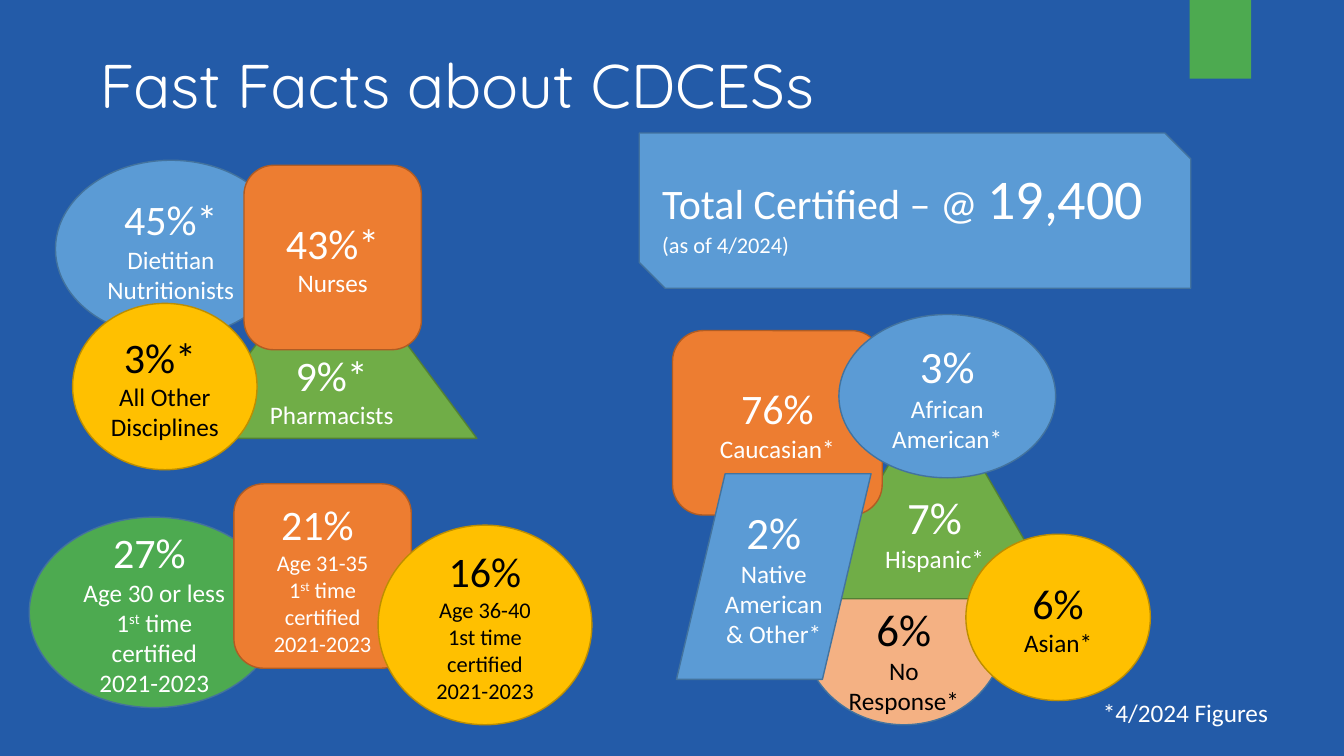
import collections
import dataclasses

import pptx
import pptx.dml.color
import pptx.enum.shapes
import pptx.enum.text
import pptx.util

PX = 9144  # EMU in one px, 100 px to the inch
SHAPES = pptx.enum.shapes.MSO_SHAPE
ALIGN = pptx.enum.text.PP_ALIGN
ANCHOR = pptx.enum.text.MSO_ANCHOR

Box = collections.namedtuple("Box", "left top width height")
Skin = collections.namedtuple("Skin", "fill line text")
Span = collections.namedtuple("Span", "text size raised", defaults=[False])
Fact = collections.namedtuple("Fact", "kind skin box paras frame", defaults=[{}])


@dataclasses.dataclass(frozen=True)
class Theme:
    background: str = "235BA8"
    accent: str = "4DAA50"
    white: str = "FFFFFF"
    body_font: str = "Calibri"
    title_font: str = "Quicksand"
    title: int = 44
    total: int = 40
    large: int = 32
    figure: int = 30
    label: int = 18
    small: int = 16
    blue: Skin = Skin("5B9BD5", "43739E", "FFFFFF")
    orange: Skin = Skin("ED7D31", "AF5C24", "FFFFFF")
    yellow: Skin = Skin("FFC000", "BD8E00", "000000")
    leaf: Skin = Skin("70AD47", "538035", "FFFFFF")
    green: Skin = Skin("4DAA50", "43739E", "FFFFFF")
    peach: Skin = Skin("F4B183", "43739E", "000000")


THEME = Theme()


def color(code):
    return pptx.dml.color.RGBColor.from_string(code)


def px(*lengths):
    return [length * PX for length in lengths]


def apply(target, values):
    for name, value in values.items():
        setattr(target, name, value)


def within(region, part):
    return Box(region.left + part.left, region.top + part.top, part.width, part.height)


def write(shape, paras, ink, font=THEME.body_font, para_format=None, frame_format=None):
    frame = shape.text_frame
    apply(frame, {"word_wrap": True, "vertical_anchor": ANCHOR.MIDDLE, **(frame_format or {})})
    for index, spans in enumerate(paras):
        para = frame.paragraphs[0] if index == 0 else frame.add_paragraph()
        apply(para, para_format or {"alignment": ALIGN.CENTER})
        for span in spans:
            run = para.add_run()
            run.text = span.text
            apply(run.font, {"name": font, "size": pptx.util.Pt(span.size)})
            run.font.color.rgb = color(ink)
            if span.raised:
                run.font._element.set("baseline", "30000")


def add_block(page, kind, box, fill, line=None):
    shape = page.shapes.add_shape(kind, *px(*box))
    shape.shadow.inherit = False
    shape.fill.solid()
    shape.fill.fore_color.rgb = color(fill)
    if line:
        shape.line.color.rgb = color(line)
        shape.line.width = pptx.util.Pt(1)
    else:
        shape.line.fill.background()
    return shape


def add_title(page, box):
    write(page.shapes.add_textbox(*px(*box)), [[Span("Fast Facts about CDCESs", THEME.title)]],
          THEME.white, THEME.title_font, {"alignment": ALIGN.LEFT, "line_spacing": 0.9})


def add_total(page, box):
    skin = THEME.blue
    banner = add_block(page, SHAPES.SNIP_2_DIAG_RECTANGLE, box, skin.fill, skin.line)
    spans = [Span("Total Certified – @ ", THEME.figure), Span("19,400 ", THEME.total),
             Span("(as of 4/2024)", THEME.small)]
    write(banner, [spans], skin.text, para_format={"alignment": ALIGN.LEFT})


def add_cluster(page, region, facts):
    for fact in facts:
        skin = fact.skin
        shape = add_block(page, fact.kind, within(region, fact.box), skin.fill, skin.line)
        if fact.kind == SHAPES.CHORD:
            for index, degrees in enumerate((215.26, 162)):
                shape.adjustments[index] = degrees * 0.6
        write(shape, fact.paras, skin.text, frame_format=fact.frame)


def add_footnote(page, box):
    write(page.shapes.add_textbox(*px(*box)), [[Span("*4/2024 Figures", THEME.label)]],
          THEME.white, para_format={"alignment": ALIGN.LEFT},
          frame_format={"vertical_anchor": ANCHOR.TOP,
                        "auto_size": pptx.enum.text.MSO_AUTO_SIZE.SHAPE_TO_FIT_TEXT})


def headline(figure, label, size=THEME.figure):
    """Figure and label in one paragraph, which wraps between them."""
    return [[Span(figure, size), Span(label, THEME.label)]]


def stacked(figure, label, size=THEME.figure):
    """Figure and label in a paragraph each."""
    return [[span] for span in headline(figure, label, size)[0]]


def age_group(figure, ages, size, raised=True):
    first_time = [Span("1", size), Span("st", size, raised), Span(" time certified", size)]
    return [figure, [Span(ages, size)], first_time, [Span("2021-2023", size)]]


# Share of certified people by discipline
DISCIPLINES = [
    Fact(SHAPES.ISOSCELES_TRIANGLE, THEME.leaf, Box(130, 82, 288, 194),
         headline("9%* ", "Pharmacists")),
    Fact(SHAPES.OVAL, THEME.blue, Box(0, 0, 229, 176),
         headline("45%* ", "Dietitian Nutritionists")),
    Fact(SHAPES.ROUNDED_RECTANGLE, THEME.orange, Box(187, 5, 176, 183),
         headline("43%*", " Nurses")),
    Fact(SHAPES.OVAL, THEME.yellow, Box(17, 142, 183, 165),
         stacked("3%* ", "All Other Disciplines")),
]

# Age at first certification
AGES = [
    Fact(SHAPES.OVAL, THEME.green, Box(0, 33, 248, 189),
         age_group([Span("27% ", THEME.figure)], "Age 30 or less", THEME.label)),
    Fact(SHAPES.ROUNDED_RECTANGLE, THEME.orange, Box(203, 0, 176, 183),
         age_group([Span("21%", THEME.figure), Span(" ", THEME.large)],
                   "Age 31-35", THEME.small)),
    Fact(SHAPES.OVAL, THEME.yellow, Box(346, 41, 212, 198),
         age_group([Span("16%", THEME.figure)], "Age 36-40", THEME.small, raised=False)),
]

# Ethnicity
ETHNICITIES = [
    Fact(SHAPES.CHORD, THEME.peach, Box(129, 222, 201, 185),
         stacked("6%", "No Response*", THEME.large), {"margin_top": 59 * PX}),
    Fact(SHAPES.ISOSCELES_TRIANGLE, THEME.leaf, Box(137, 71, 246, 211),
         stacked("7%", "Hispanic*", THEME.large), {"margin_bottom": 32 * PX}),
    Fact(SHAPES.ROUNDED_RECTANGLE, THEME.orange, Box(0, 16, 208, 183),
         headline("76%", " Caucasian*")),
    Fact(SHAPES.OVAL, THEME.blue, Box(165, 0, 215, 162),
         headline("3% ", "African American*", THEME.large)),
    Fact(SHAPES.OVAL, THEME.yellow, Box(291, 218, 183, 165),
         headline("6% ", "Asian*")),
    Fact(SHAPES.PARALLELOGRAM, THEME.blue, Box(4, 158, 193, 204),
         headline("2%", " Native American & Other*", THEME.large)),
]


def main():
    deck = pptx.Presentation()
    apply(deck, {"slide_width": 1333 * PX, "slide_height": 750 * PX})
    page = deck.slides.add_slide(deck.slide_layouts[6])
    page.background.fill.solid()
    page.background.fill.fore_color.rgb = color(THEME.background)

    # Header
    add_block(page, SHAPES.RECTANGLE, Box(1180, 0, 61, 78), THEME.accent)
    add_title(page, Box(89, 15, 1150, 145))
    add_total(page, Box(634, 132, 547, 154))

    # Clusters of facts
    add_cluster(page, Box(55, 159, 418, 307), DISCIPLINES)
    add_cluster(page, Box(29, 480, 558, 239), AGES)
    add_cluster(page, Box(667, 312, 474, 407), ETHNICITIES)

    add_footnote(page, Box(1084, 687, 201, 40))
    deck.save("out.pptx")


if __name__ == "__main__":
    main()
